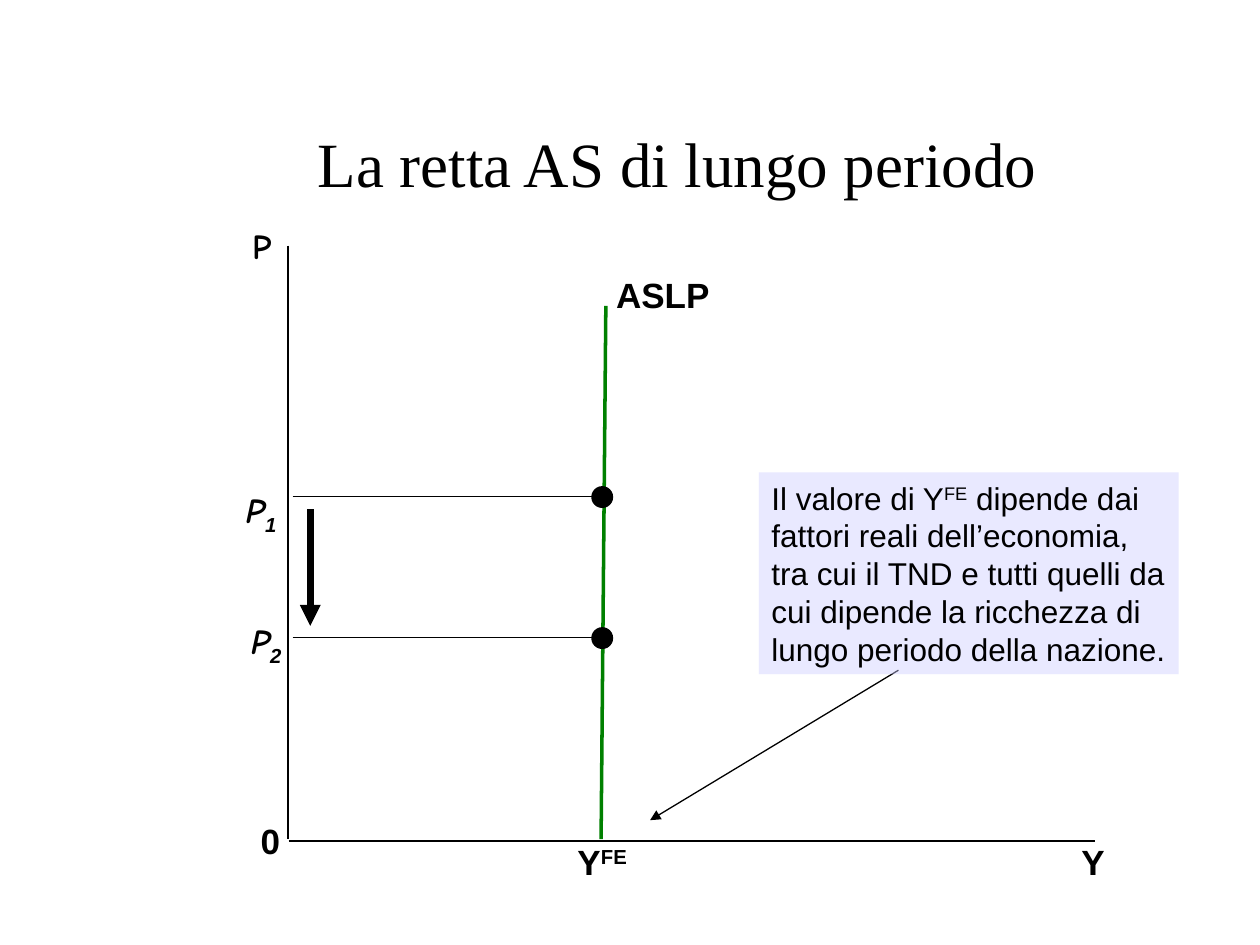
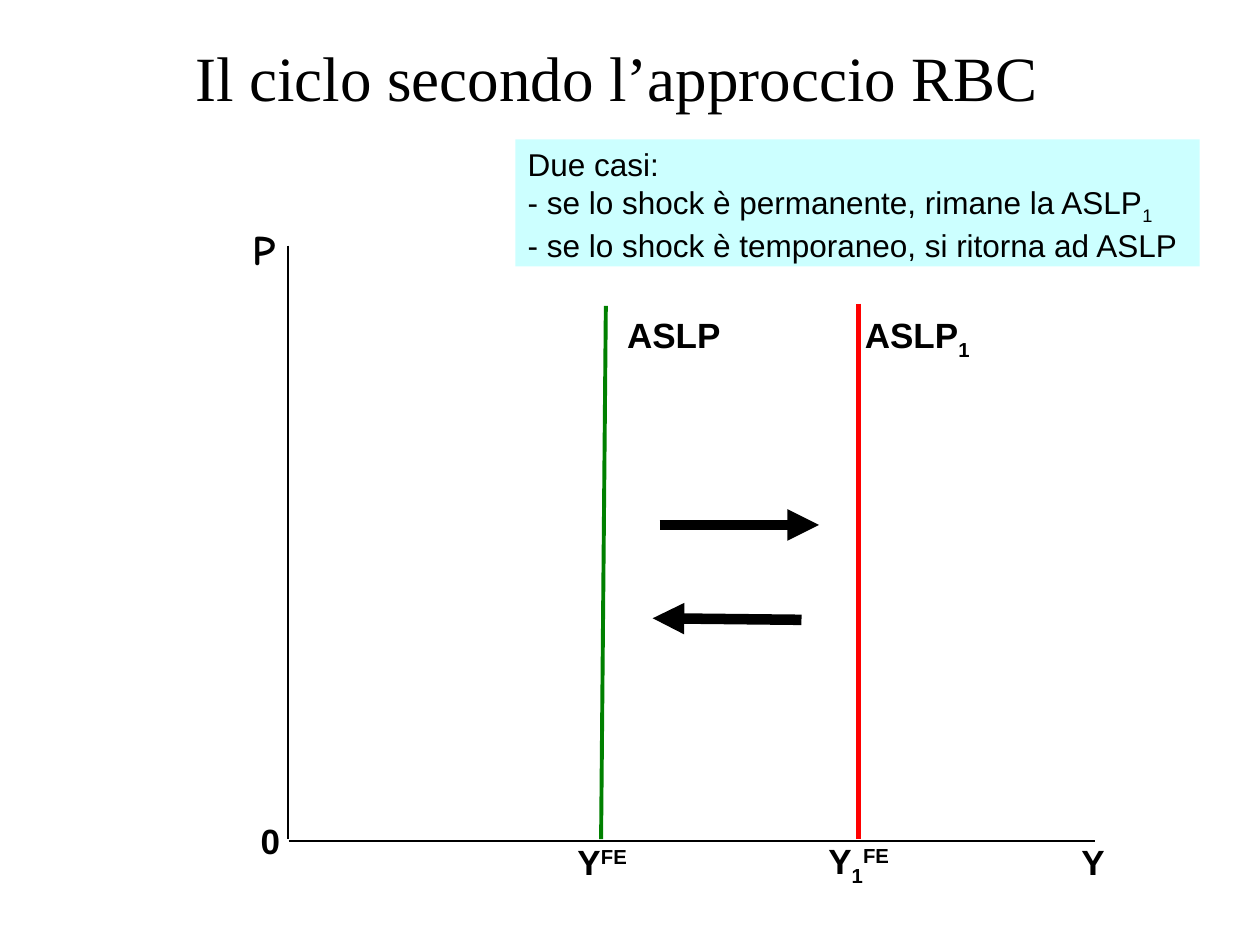
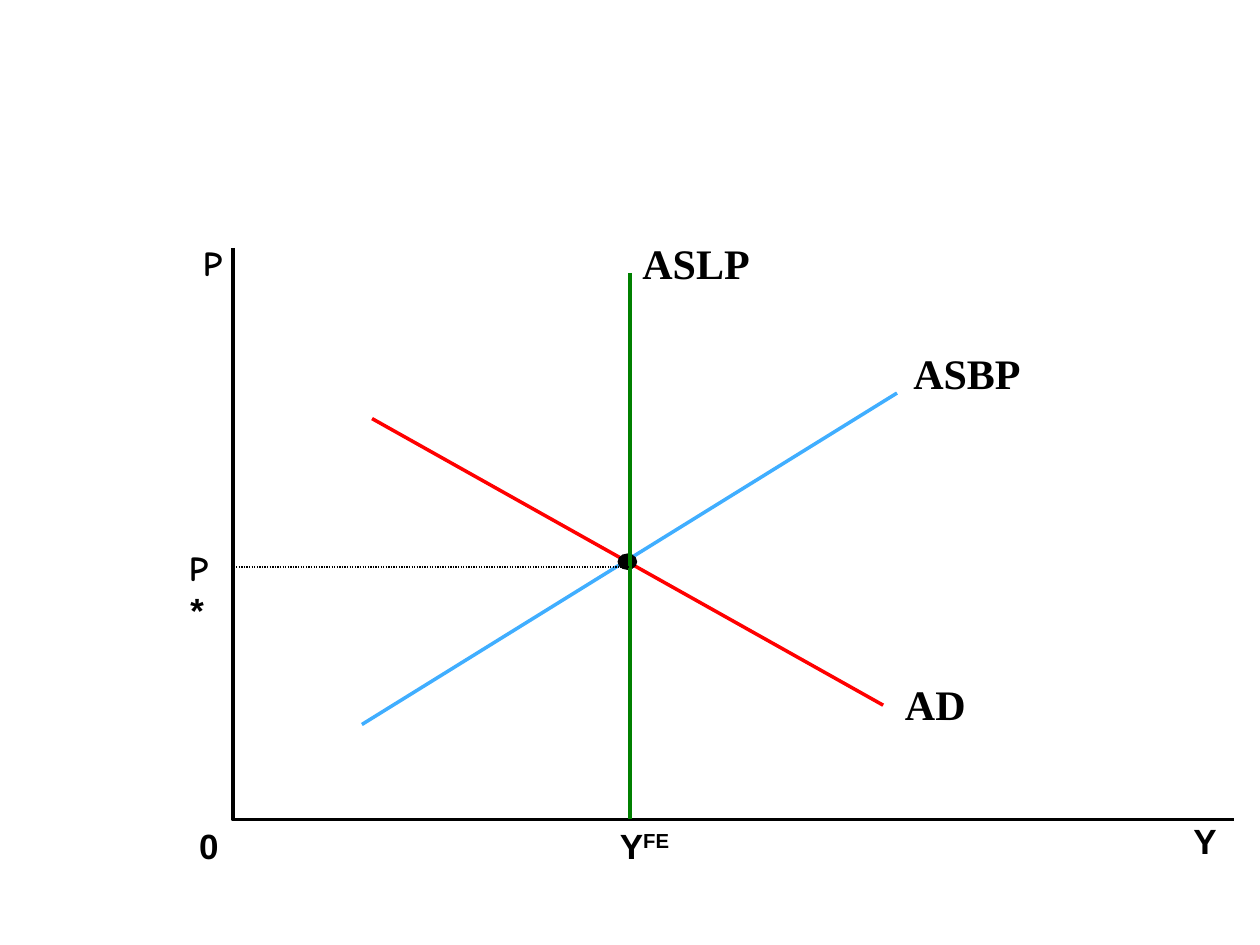
from math import cos, sin, pi

from lxml.etree import SubElement
from pptx import Presentation
from pptx.dml.color import RGBColor
from pptx.enum.dml import MSO_LINE as Dash
from pptx.enum.shapes import MSO_CONNECTOR as Link, MSO_SHAPE as Form
from pptx.enum.text import MSO_ANCHOR as Anchor, MSO_AUTO_SIZE as Fit, PP_ALIGN as Align
from pptx.oxml.ns import qn
from pptx.util import Pt

hue = RGBColor.from_string
BLACK, GREEN, RED, BLUE = "000000", "008000", "FF0000", "40AEFF"
SANS, COMIC, SERIF = "Arial", "Comic Neue", "Times New Roman"
UP, DOWN = 30, -25


def write(shape, rows, size=20, pad=0, wrap=False, grow=True):
    frame = shape.text_frame
    frame.margin_left = frame.margin_right = Pt(pad)
    frame.margin_top = frame.margin_bottom = Pt(pad / 2)
    frame.vertical_anchor = Anchor.TOP
    frame.word_wrap = wrap
    frame.auto_size = Fit.SHAPE_TO_FIT_TEXT if grow else Fit.NONE
    for i, row in enumerate(rows):
        para = frame.add_paragraph() if i else frame.paragraphs[0]
        para.alignment = Align.LEFT
        for text, face, style, base in row:
            run = para.add_run()
            run.text = text
            font = run.font
            font.name, font.size = face, Pt(size)
            font.bold, font.italic = "b" in style, "i" in style
            font.color.rgb = hue(BLACK)
            if base:
                run._r.get_or_add_rPr().set("baseline", str(base * 1000))
    return frame


def rule(slide, ends, tint=BLACK, width=1, tip=False):
    line = slide.shapes.add_connector(Link.STRAIGHT, *[Pt(n) for n in ends])
    line.line.color.rgb = hue(tint)
    line.line.width = Pt(width)
    props = line.element.spPr
    if tip:
        SubElement(props.find(qn("a:ln")), qn("a:tailEnd"), type="triangle")
    SubElement(props, qn("a:effectLst"))
    return line


deck = Presentation()
deck.slide_width, deck.slide_height = Pt(720), Pt(540)
long, cycle, model = [deck.slides.add_slide(deck.slide_layouts[6]) for _ in range(3)]

Y = ("Y", SANS, "b", 0)
FE = ("FE", SANS, "b", UP)
P = ("P", COMIC, "b", 0)
SLOPE = ("P", COMIC, "bi", 0)
ZERO = ("0", SANS, "b", 0)
ASLP = ("ASLP", SANS, "b", 0)
ONE = ("1", SANS, "b", DOWN)

for slide, text, box in [
    (long, "La retta AS di lungo periodo", (54, 48, 666, 90)),
    (cycle, "Il ciclo secondo l’approccio RBC", (19.5, 9.2, 666, 68.4)),
]:
    title = slide.shapes.add_textbox(*[Pt(n) for n in box])
    frame = write(title, [[(text, SERIF, "", 0)]], 36, 7.2, True, False)
    frame.vertical_anchor = Anchor.MIDDLE
    frame.paragraphs[0].alignment = Align.CENTER

for slide, size, width in [(long, 20, 2), (cycle, 24, 2.25)]:
    for run, x, y, w in [([Y], 618, 480, 14), ([Y, FE], 330, 480, 30), ([ZERO], 149, 468, 11)]:
        write(slide.shapes.add_textbox(Pt(x), Pt(y), Pt(w), Pt(24)), [run])
    price = slide.shapes.add_textbox(Pt(144), Pt(132), Pt(18), Pt(size))
    frame = write(price, [[P]], size, wrap=True)
    frame.paragraphs[0].line_spacing = 0.85
    rule(slide, (164.4, 140.4, 164.4, 479.5))
    rule(slide, (165, 480.4, 625.7, 480.4))
    rule(slide, (346.2, 174.8, 343.5, 479.5), GREEN, width)

for slide, run, x, y, w in [
    (long, [ASLP], 352, 156, 60),
    (long, [SLOPE, ("1", SANS, "bi", DOWN)], 140.4, 279.4, 18),
    (long, [SLOPE, ("2", SANS, "bi", DOWN)], 143.3, 354.2, 18),
    (cycle, [ASLP], 358.3, 179.3, 60),
    (cycle, [ASLP, ONE], 494.2, 179.3, 66),
    (cycle, [Y, ONE, FE], 473.3, 479.7, 40),
    (model, [Y, FE], 354.2, 471, 31),
    (model, [Y], 682, 468, 14),
    (model, [P], 116, 138.2, 11),
    (model, [ZERO], 113.8, 471, 11),
]:
    write(slide.shapes.add_textbox(Pt(x), Pt(y), Pt(w), Pt(24)), [run], grow=False)

for y in (283.7, 364.3):
    rule(long, (167.2, y, 342, y))
    dot = long.shapes.add_shape(Form.OVAL, Pt(338.4), Pt(y - 5.4), Pt(11.5), Pt(11.5))
    dot.shadow.inherit = False
    dot.fill.solid()
    dot.fill.fore_color.rgb = hue(BLACK)
    dot.line.color.rgb = hue(BLACK)
    dot.line.width = Pt(1)
rule(long, (177.3, 290.9, 177.3, 357.6), width=4, tip=True)
rule(long, (513.4, 383, 371.5, 468.7), width=0.75, tip=True)

rule(cycle, (490.5, 173.5, 490.5, 479.5), RED, 3)
rule(cycle, (377, 300, 468, 300), width=6, tip=True)
rule(cycle, (458, 354.2, 373, 353.3), width=6, tip=True)

value = [
    [("Il valore di Y", SANS, "", 0), ("FE", SANS, "", UP), (" dipende dai", SANS, "", 0)],
    [("fattori reali dell’economia,", SANS, "", 0)],
    [("tra cui il TND e tutti quelli da", SANS, "", 0)],
    [("cui dipende la ricchezza di", SANS, "", 0)],
    [("lungo periodo della nazione.", SANS, "", 0)],
]
cases = [
    [("Due casi:", SANS, "", 0)],
    [("- se lo shock è permanente, rimane la ASLP", SANS, "", 0), ("1", SANS, "", DOWN)],
    [("- se lo shock è temporaneo, si ritorna ad ASLP", SANS, "", 0)],
]
for slide, rows, box, tint, alpha, wrap in [
    (long, value, (433.7, 270, 239.8, 115.2), "CCCCFF", 43, False),
    (cycle, cases, (294.5, 79.6, 391, 72.7), "CCFFFF", 100, True),
]:
    note = slide.shapes.add_shape(Form.RECTANGLE, *[Pt(n) for n in box])
    note.shadow.inherit = False
    note.fill.solid()
    note.fill.fore_color.rgb = hue(tint)
    note.line.fill.background()
    if alpha < 100:
        paint = note.element.spPr.find(qn("a:solidFill")).find(qn("a:srgbClr"))
        SubElement(paint, qn("a:alpha"), val=str(alpha * 1000))
    write(note, rows, 18, 7.2, wrap)

star = model.shapes.add_textbox(Pt(108), Pt(312), Pt(18.7), Pt(48))
write(star, [[P, ("*", SANS, "bi", 0)]], wrap=True, grow=False)

pen = model.shapes.build_freeform(Pt(133.2), Pt(141.6))
pen.add_line_segments([(Pt(133.2), Pt(468.4)), (Pt(705), Pt(468.4))], close=False)
axes = pen.convert_to_shape()
axes.shadow.inherit = False
axes.fill.background()
axes.line.color.rgb = hue(BLACK)
axes.line.width = Pt(2)

rule(model, (504.7, 403, 212.6, 239.2), RED, 2)
rule(model, (206.8, 414, 512.6, 224.6), BLUE, 2)

ring = [(Pt(358.5 + 5.6 * cos(k * pi / 6)), Pt(321 + 4.7 * sin(k * pi / 6))) for k in range(12)]
pen = model.shapes.build_freeform(*ring[0])
pen.add_line_segments(ring[1:])
dot = pen.convert_to_shape()
dot.shadow.inherit = False
dot.fill.solid()
dot.fill.fore_color.rgb = hue(BLACK)
dot.line.fill.background()

rule(model, (360, 156, 360, 468), GREEN, 2.25)
rule(model, (132, 324, 360, 324), width=0.75).line.dash_style = Dash.ROUND_DOT

for text, x, y, w in [("ASBP", 514.8, 195, 75.6), ("AD", 510, 384, 49), ("ASLP", 360, 132, 75.6)]:
    name = model.shapes.add_textbox(Pt(x), Pt(y), Pt(w), Pt(36))
    write(name, [[(text, SERIF, "b", 0)]], 24, 7.2)

deck.save("out.pptx")
